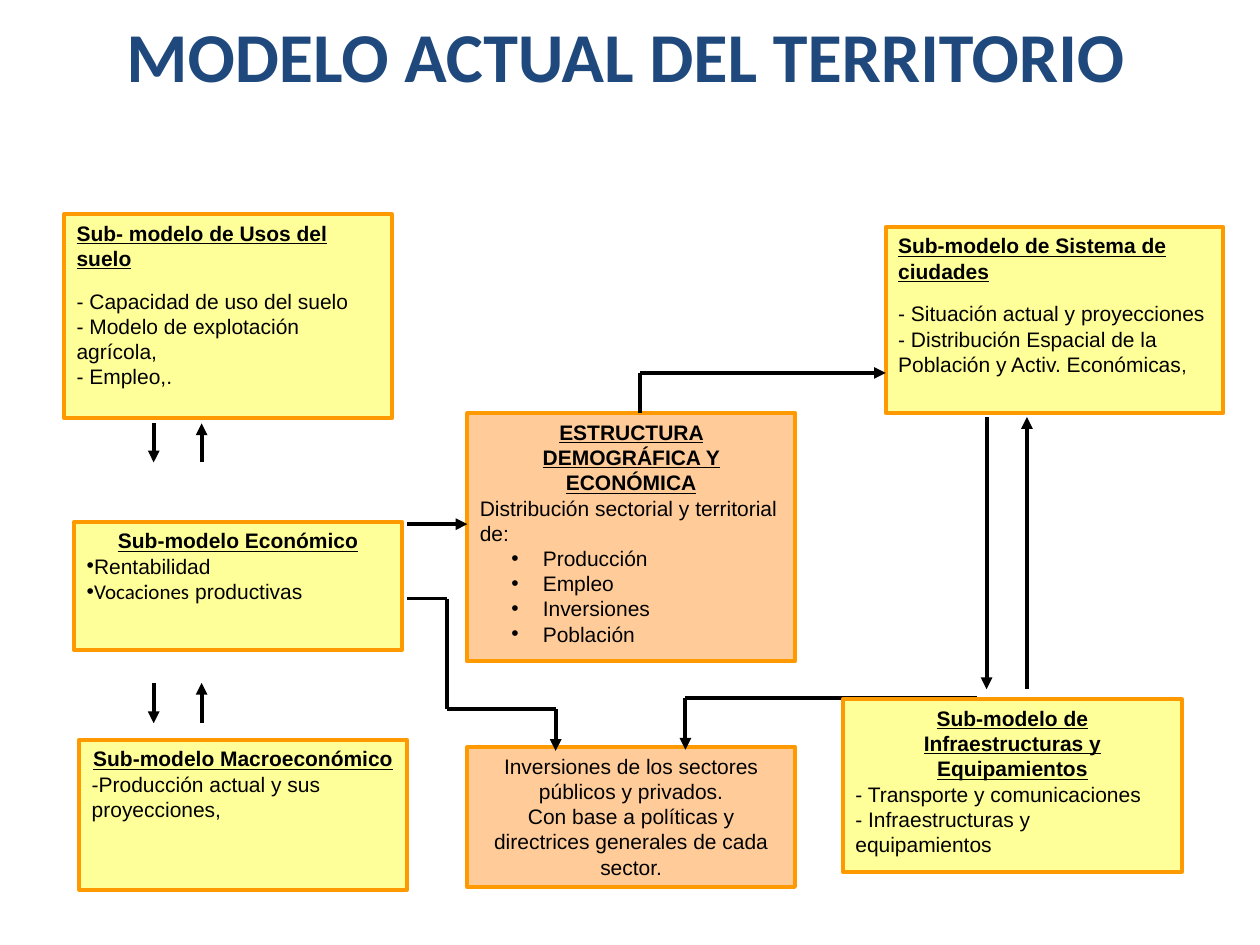
from itertools import pairwise
from lxml.etree import SubElement
from pptx import Presentation
from pptx.dml.color import RGBColor
from pptx.enum.shapes import MSO_CONNECTOR, MSO_SHAPE
from pptx.enum.text import MSO_ANCHOR, PP_ALIGN
from pptx.oxml.ns import qn
from pptx.util import Inches, Pt

theme = {
    "yellow": RGBColor.from_string("FFFF99"),
    "peach": RGBColor.from_string("FFCC99"),
    "border": RGBColor.from_string("FF9900"),
    "ink": RGBColor.from_string("000000"),
    "title": RGBColor.from_string("1F497D"),
    "body_face": "Arial",
    "title_face": "Calibri",
    "title_size": Pt(40),
    "body_size": Pt(12),
    "comma_size": Pt(11),
    "stroke": Pt(2.25),
}

deck = Presentation()
deck.slide_width, deck.slide_height = Inches(10), Inches(7.5)
column = deck.slide_width / 100
row = deck.slide_height / 75
page = deck.slides.add_slide(deck.slide_layouts[6])

kinds = {
    "lead": {"align": PP_ALIGN.LEFT, "bold": True, "after": 10},
    "heading": {"align": PP_ALIGN.CENTER, "bold": True},
    "note": {"align": PP_ALIGN.CENTER},
    "body": {"align": PP_ALIGN.LEFT},
    "bullet": {"align": PP_ALIGN.LEFT, "margin": 0, "indent": 0},
    "item": {"align": PP_ALIGN.JUSTIFY, "margin": 0.5, "indent": -0.25, "level": 1},
}


def draw_box(left, top, width, height, fill, paragraphs):
    box = page.shapes.add_shape(MSO_SHAPE.RECTANGLE, int(left * column), int(top * row),
                                int(width * column), int(height * row))
    box.shadow.inherit = False
    box.fill.solid()
    box.fill.fore_color.rgb = theme[fill]
    box.line.color.rgb = theme["border"]
    box.line.width = theme["stroke"]
    frame = box.text_frame
    frame.word_wrap = True
    frame.vertical_anchor = MSO_ANCHOR.TOP
    for index, (kind, *texts) in enumerate(paragraphs):
        style = kinds[kind]
        para = frame.add_paragraph() if index else frame.paragraphs[0]
        para.alignment = style["align"]
        para.level = style.get("level", 0)
        if "after" in style:
            para.space_after = Pt(style["after"])
        if "margin" in style:
            properties = para._p.get_or_add_pPr()
            properties.set("marL", str(Inches(style["margin"])))
            properties.set("indent", str(Inches(style["indent"])))
            SubElement(properties, qn("a:buFont")).set("typeface", theme["body_face"])
            SubElement(properties, qn("a:buChar")).set("char", "•")
        for text in texts:
            span = para.add_run()
            span.text = text
            span.font.name = theme["title_face" if text == "Vocaciones" else "body_face"]
            span.font.size = theme["comma_size" if text == "," else "body_size"]
            span.font.color.rgb = theme["ink"]
            span.font.bold = span.font.underline = style.get("bold", False)


def draw_route(points):
    for start, end in pairwise(points):
        line = page.shapes.add_connector(
            MSO_CONNECTOR.STRAIGHT, int(start[0] * column), int(start[1] * row),
            int(end[0] * column), int(end[1] * row))
        line.line.color.rgb = theme["ink"]
        line.line.width = theme["stroke"]
        if end == points[-1]:
            SubElement(line.line._get_or_add_ln(), qn("a:tailEnd")).set("type", "triangle")
        SubElement(line._element.spPr, qn("a:effectLst"))


panels = [
    (70.3, 18, 26.8, 14.8, "yellow", [
        ("lead", "Sub-modelo de Sistema de ciudades"),
        ("body", "- Situación actual y proyecciones"),
        ("body", "- Distribución Espacial de la Población y Activ. Económicas", ","),
    ]),
    (37.1, 59.3, 26, 11.1, "peach", [
        ("note", "Inversiones de los sectores públicos y privados."),
        ("note", "Con base a políticas y directrices generales de cada sector."),
    ]),
    (6.3, 58.7, 26, 11.9, "yellow", [
        ("heading", "Sub-modelo Macroeconómico"),
        ("body", "-Producción actual y sus proyecciones,"),
    ]),
    (5.9, 41.4, 26, 10.2, "yellow", [
        ("heading", "Sub-modelo Económico"),
        ("bullet", "Rentabilidad"),
        ("bullet", "Vocaciones", " productivas"),
    ]),
    (37.1, 32.8, 26, 19.7, "peach", [
        ("heading", "ESTRUCTURA DEMOGRÁFICA Y ECONÓMICA"),
        ("body", "Distribución sectorial y territorial de:"),
        ("item", "Producción"),
        ("item", "Empleo"),
        ("item", "Inversiones"),
        ("item", "Población"),
    ]),
    (5.1, 17, 26, 16.2, "yellow", [
        ("lead", "Sub- modelo de Usos del suelo"),
        ("body", "- Capacidad de uso del suelo"),
        ("body", "- Modelo de explotación agrícola,"),
        ("body", "- Empleo,."),
    ]),
]
infrastructure = (66.9, 55.5, 26.9, 13.7, "yellow", [
    ("heading", "Sub-modelo de Infraestructuras y Equipamientos"),
    ("body", "- Transporte y comunicaciones"),
    ("body", "- Infraestructuras y equipamientos"),
])
routes = [
    [(50.8, 32.8), (50.8, 29.6), (70.3, 29.6)],
    [(32.3, 41.6), (37.1, 41.6)],
    [(77.5, 55.4), (54.4, 55.4), (54.4, 59.5)],
    [(32.3, 47.5), (35.5, 47.5), (35.5, 56.3), (44.1, 56.3), (44.1, 59.6)],
]
for down, up, top, bottom in [(12.2, 16, 33.6, 36.7), (12.2, 16, 54.2, 57.4),
                              (78.3, 81.5, 33.1, 54.7)]:
    routes += [[(down, top), (down, bottom)], [(up, bottom), (up, top)]]

for panel in panels:
    draw_box(*panel)
for route in routes:
    draw_route(route)
draw_box(*infrastructure)

title = page.shapes.add_textbox(int(4.3 * column), int(0.5 * row),
                                int(90.7 * column), int(7.7 * row))
title.text_frame.word_wrap = True
title.text_frame.text = "MODELO ACTUAL DEL TERRITORIO"
para = title.text_frame.paragraphs[0]
para.alignment = PP_ALIGN.CENTER
span = para.runs[0]
span.font.name = theme["title_face"]
span.font.size = theme["title_size"]
span.font.bold = True
span.font.color.rgb = theme["title"]

deck.save("out.pptx")
